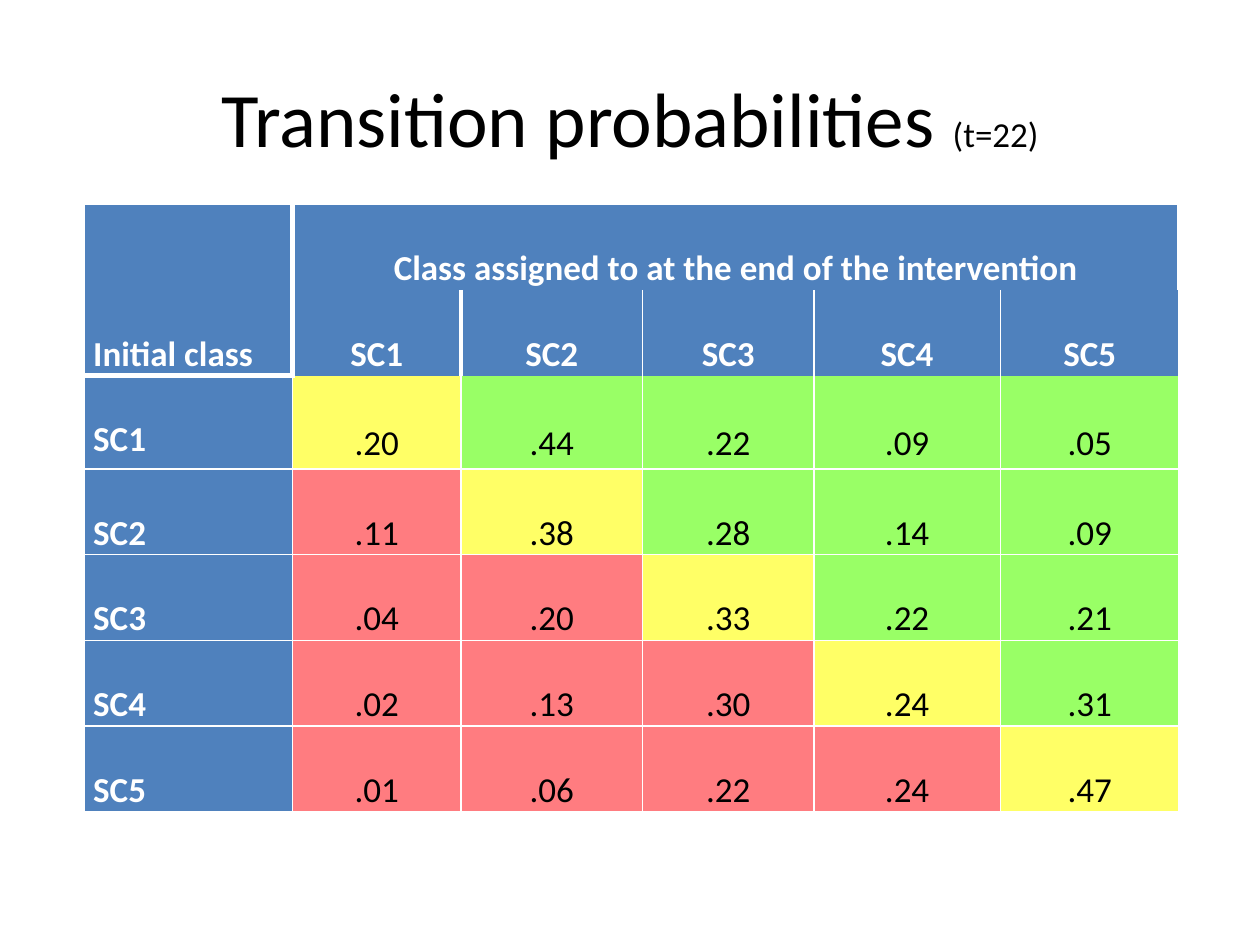
from typing import NamedTuple

from lxml.etree import SubElement
from pptx import Presentation
from pptx.dml.color import RGBColor
from pptx.enum.text import MSO_ANCHOR as Anchor, PP_ALIGN as Align
from pptx.oxml.ns import qn
from pptx.util import Inches, Pt

COLORS = {
    "text": "000000",
    "white": "FFFFFF",
    "header": "4F81BD",
    "worse": "FF7C80",
    "same": "FFFF66",
    "better": "99FF66",
}
FONT = "Calibri"
CLASSES = ["SC1", "SC2", "SC3", "SC4", "SC5"]
PROBABILITIES = [
    [".20", ".44", ".22", ".09", ".05"],
    [".11", ".38", ".28", ".14", ".09"],
    [".04", ".20", ".33", ".22", ".21"],
    [".02", ".13", ".30", ".24", ".31"],
    [".01", ".06", ".22", ".24", ".47"],
]
COL_WIDTHS = [1.65, 1.34, 1.44, 1.36, 1.48, 1.42]
ROW_HEIGHTS = [0.64, 0.64, 0.74, 0.64, 0.64, 0.64, 0.64]


class CellStyle(NamedTuple):
    fill: str
    color: str
    bold: bool
    align: Align
    anchor: Anchor


CORNER = CellStyle("header", "white", True, Align.JUSTIFY, Anchor.BOTTOM)
COL_HEAD = CellStyle("header", "white", True, Align.CENTER, Anchor.TOP)
ROW_HEAD = CellStyle("header", "white", True, Align.JUSTIFY, Anchor.TOP)


def value_style(row: int, col: int) -> CellStyle:
    fill = "same" if row == col else "better" if col > row else "worse"
    return CellStyle(fill, "text", False, Align.CENTER, Anchor.MIDDLE)


def add_run(p, text: str, size: float, color: str, bold: bool = False) -> None:
    r = p.add_run()
    r.text = text
    r.font.name = FONT
    r.font.size = Pt(size)
    r.font.bold = bold
    r.font.color.rgb = RGBColor.from_string(COLORS[color])


def border_widths(row: int, col: int) -> dict[str, float]:
    widths = {"L": 1, "R": 1, "T": 1, "B": 1}
    if row < 2:
        if col < 2:
            widths["R"] = 3
        if col in (1, 2):
            widths["L"] = 3
    if col == 0 and row == 1:
        widths["B"] = 3
    if col == 0 and row == 2:
        widths["T"] = 3
    if col > 0:
        if row in (0, 1):
            widths["B"] = 0
        if row in (1, 2):
            widths["T"] = 0
    return widths


def set_borders(cell, widths: dict[str, float]) -> None:
    tc_pr = cell._tc.get_or_add_tcPr()
    for side, width in widths.items():
        ln = SubElement(tc_pr, qn(f"a:ln{side}"), w=str(Pt(width)))
        if width:
            fill = SubElement(ln, qn("a:solidFill"))
            SubElement(fill, qn("a:srgbClr"), val=COLORS["white"])
        else:
            SubElement(ln, qn("a:noFill"))


def write_cell(cell, text: str, style: CellStyle) -> None:
    cell.vertical_anchor = style.anchor
    p = cell.text_frame.paragraphs[0]
    p.alignment = style.align
    p.line_spacing = 2.0
    add_run(p, text, 20, style.color, style.bold)
    cell.fill.solid()
    cell.fill.fore_color.rgb = RGBColor.from_string(COLORS[style.fill])


def add_title(slide) -> None:
    sp = slide.shapes.title
    sp.left, sp.top = Inches(0.5), Inches(0.3)
    sp.width, sp.height = Inches(9), Inches(1.25)
    tf = sp.text_frame
    tf.vertical_anchor = Anchor.MIDDLE
    p = tf.paragraphs[0]
    p.alignment = Align.CENTER
    add_run(p, "Transition probabilities ", 44, "text")
    add_run(p, "(t=22)", 20, "text")


def add_transition_table(slide) -> None:
    table = slide.shapes.add_table(
        len(ROW_HEIGHTS), len(COL_WIDTHS), Inches(0.67), Inches(1.62),
        Inches(sum(COL_WIDTHS)), Inches(sum(ROW_HEIGHTS)),
    ).table
    table.first_row = False
    table.horz_banding = False
    for column, width in zip(table.columns, COL_WIDTHS):
        column.width = Inches(width)
    for row, height in zip(table.rows, ROW_HEIGHTS):
        row.height = Inches(height)
    for i in range(len(ROW_HEIGHTS)):
        for j in range(len(COL_WIDTHS)):
            cell = table.cell(i, j)
            cell.margin_left = cell.margin_right = Inches(0.07)
            cell.margin_top = cell.margin_bottom = 0
            set_borders(cell, border_widths(i, j))

    corner, heading = table.cell(0, 0), table.cell(0, 1)
    corner.merge(table.cell(1, 0))
    heading.merge(table.cell(0, len(CLASSES)))
    write_cell(corner, "Initial class", CORNER)
    write_cell(heading, "Class assigned to at the end of the intervention", COL_HEAD)
    for i, (name, values) in enumerate(zip(CLASSES, PROBABILITIES)):
        write_cell(table.cell(1, i + 1), name, COL_HEAD)
        write_cell(table.cell(i + 2, 0), name, ROW_HEAD)
        for j, value in enumerate(values):
            write_cell(table.cell(i + 2, j + 1), value, value_style(i, j))


def main() -> None:
    prs = Presentation()
    prs.slide_width, prs.slide_height = Inches(10), Inches(7.5)
    slide = prs.slides.add_slide(prs.slide_layouts[5])
    add_title(slide)
    add_transition_table(slide)
    prs.save("out.pptx")


if __name__ == "__main__":
    main()
